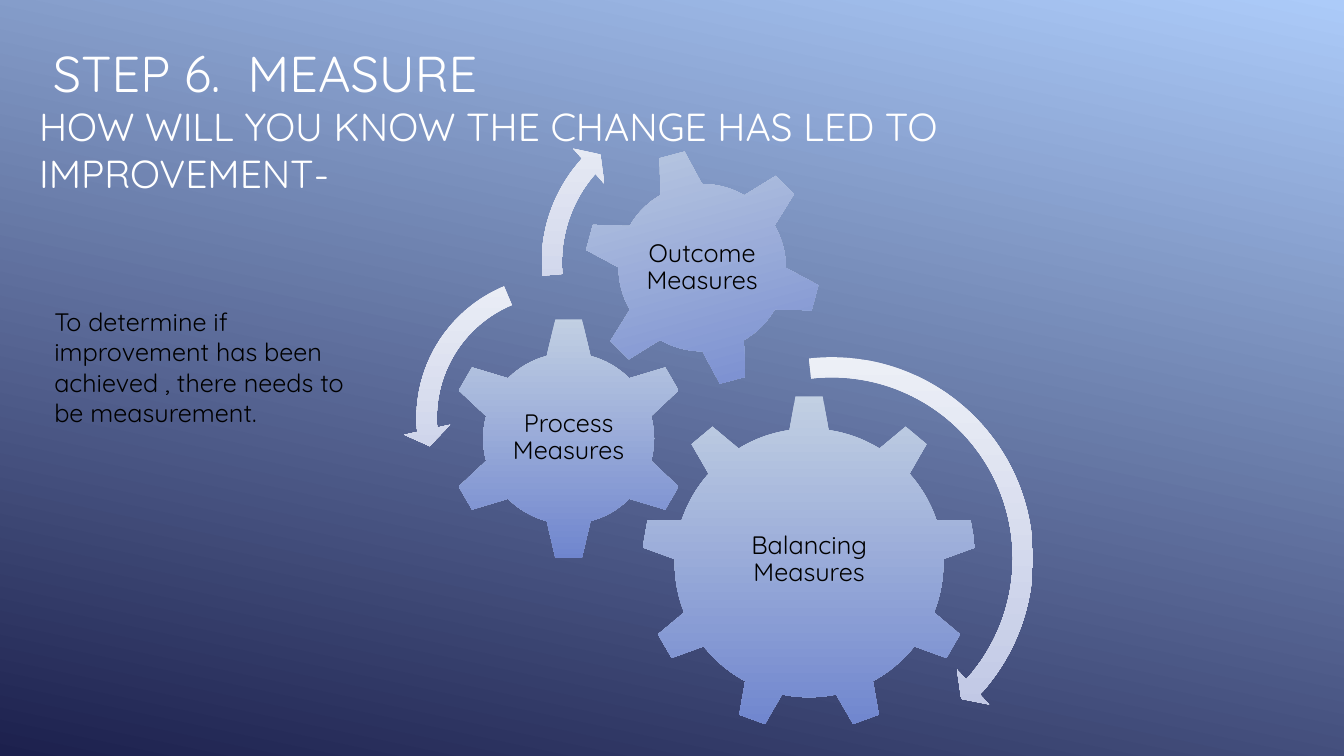
from pptx import Presentation
from pptx.dml.color import RGBColor
from pptx.enum.shapes import MSO_SHAPE
from pptx.enum.text import MSO_ANCHOR, PP_ALIGN
from pptx.util import Inches, Pt

FONT = "Quicksand"
COLORS = {
    "sky": "ACCBF9", "night": "1C204D",
    "gear_top": "C2D0E3", "gear_bottom": "6F85CE",
    "arrow_top": "EEF1F7", "arrow_bottom": "B9C1E2",
    "title": "FFFFFF", "text": "000000",
}

TITLE = [(" STEP 6.  MEASURE", 36),
         ("HOW WILL YOU KNOW THE CHANGE HAS LED TO IMPROVEMENT-", 27.9)]
BODY = ("To determine if improvement has been achieved , "
        "there needs to be measurement.")

# label, shape, (left, top, size), rotation, label box (left, top, width, height)
GEARS = [
    ("Balancing Measures", MSO_SHAPE.GEAR_9, (6.36, 3.92, 3.33), 0,
     (7.03, 4.7, 1.99, 1.71)),
    ("Process Measures", MSO_SHAPE.GEAR_6, (4.43, 3.14, 2.42), 0,
     (5.04, 3.75, 1.2, 1.19)),
    ("Outcome Measures", MSO_SHAPE.GEAR_6, (5.78, 1.47, 2.37), 345,
     (6.3, 1.99, 1.33, 1.33)),
]

# shape, (left, top, size), adjustments
ARROWS = [
    (MSO_SHAPE.CIRCULAR_ARROW, (6.12, 3.41, 4.26),
     (0.047, 2.99, 25.409, 158.089, 0.055)),
    (MSO_SHAPE.LEFT_CIRCULAR_ARROW, (4, 2.6, 3.09),
     (0.065, 4.3, 104.891, 148.378, 0.075)),
    (MSO_SHAPE.CIRCULAR_ARROW, (5.24, 0.94, 3.33),
     (0.06, 3.941, 133.138, 105.082, 0.07)),
]


def set_gradient(fill, first, last, clockwise_angle=90):
    fill.gradient()
    fill.gradient_angle = 360 - clockwise_angle
    for stop, name in zip(fill.gradient_stops, (first, last)):
        stop.color.rgb = RGBColor.from_string(COLORS[name])


def add_square_shape(page, kind, place, first, last):
    left, top, size = map(Inches, place)
    shape = page.shapes.add_shape(kind, left, top, size, size)
    shape.shadow.inherit = False
    shape.line.fill.background()
    set_gradient(shape.fill, first, last)
    return shape


def add_text(page, place, lines, color, anchor=MSO_ANCHOR.TOP):
    box = page.shapes.add_textbox(*map(Inches, place))
    frame = box.text_frame
    frame.word_wrap = True
    frame.vertical_anchor = anchor
    for index, (text, size) in enumerate(lines):
        para = frame.add_paragraph() if index else frame.paragraphs[0]
        para.text = text
        para.font.name = FONT
        para.font.size = Pt(size)
        para.font.color.rgb = RGBColor.from_string(COLORS[color])
    return frame


deck = Presentation()
deck.slide_width, deck.slide_height = Inches(13.33), Inches(7.5)
page = deck.slides.add_slide(deck.slide_layouts[6])
set_gradient(page.background.fill, "sky", "night", 102)

# Title
add_text(page, (0.29, 0.68, 11.5, 1), TITLE, "title", MSO_ANCHOR.MIDDLE)

# Gears with their labels
for label, kind, place, rotation, label_place in GEARS:
    gear = add_square_shape(page, kind, place, "gear_top", "gear_bottom")
    gear.rotation = rotation
    frame = add_text(page, label_place, [(label, 18)], "text", MSO_ANCHOR.MIDDLE)
    frame.margin_left = frame.margin_right = Inches(0.03)
    frame.margin_top = frame.margin_bottom = Inches(0.03)
    frame.paragraphs[0].alignment = PP_ALIGN.CENTER
    frame.paragraphs[0].line_spacing = 0.9

# Turning arrows
for kind, place, adjustments in ARROWS:
    arrow = add_square_shape(page, kind, place, "arrow_top", "arrow_bottom")
    for index, value in enumerate(adjustments):
        arrow.adjustments[index] = value

# Side text
add_text(page, (0.44, 2.99, 3.24, 1.3), [(BODY, 18)], "text")

deck.save("out.pptx")
